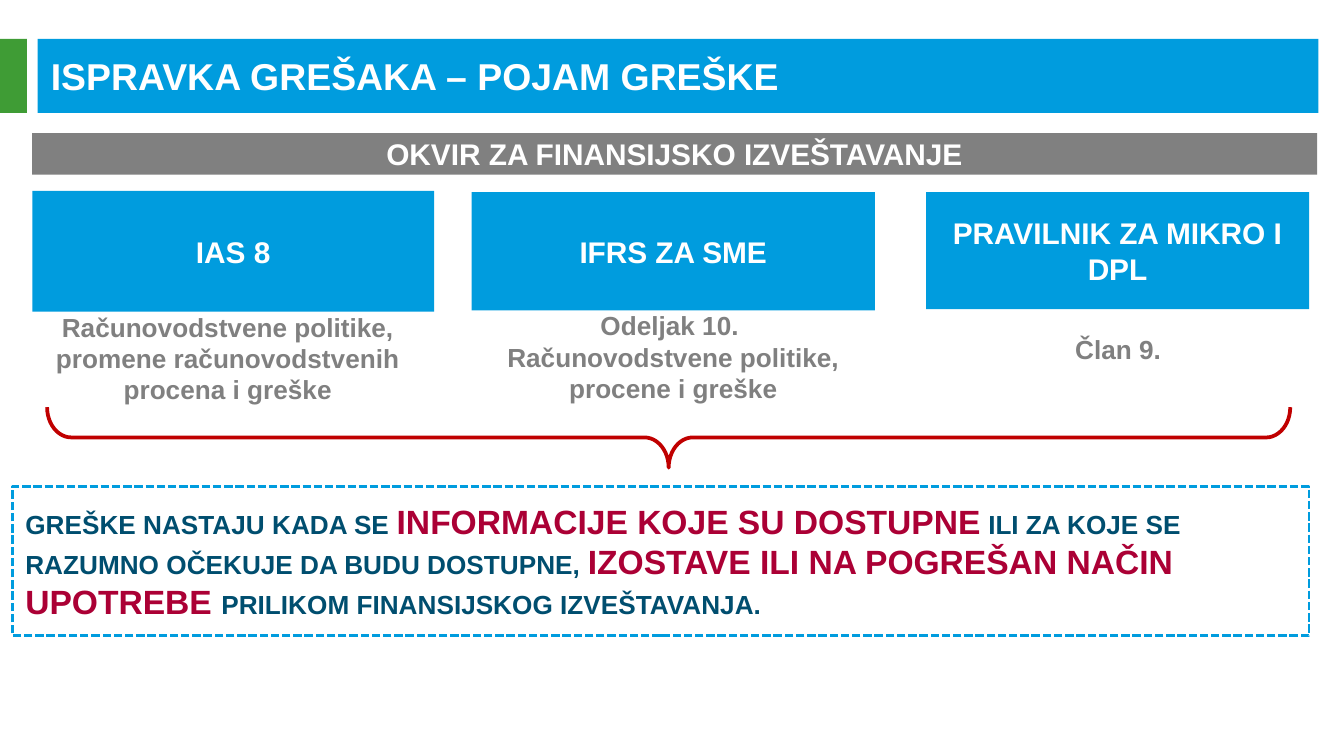
from dataclasses import dataclass
from typing import Optional

from pptx import Presentation
from pptx.dml.color import RGBColor
from pptx.enum.dml import MSO_LINE_DASH_STYLE as Dash
from pptx.enum.shapes import MSO_SHAPE as Preset
from pptx.enum.text import MSO_ANCHOR as Anchor, PP_ALIGN as Align
from pptx.util import Inches, Pt

SLIDE_WIDTH = Inches(10)
SLIDE_HEIGHT = SLIDE_WIDTH * 9 // 16
CELL = SLIDE_WIDTH // 100
BLUE, GREEN, GREY, WHITE = "009CDE", "3F9C35", "808080", "FFFFFF"
NAVY, CRIMSON, RED = "004E6F", "AB0035", "C00000"


@dataclass(frozen=True)
class Area:
    """A place in columns and rows of the slide grid."""
    column: float
    row: float
    width: float
    height: float

    def lengths(self) -> list:
        return [round(cells * CELL) for cells in (self.column, self.row, self.width, self.height)]


@dataclass(frozen=True)
class Words:
    """A run of bold text."""
    text: str
    size: int
    color: str


@dataclass(frozen=True)
class Framework:
    """A reporting framework with its header and the reference below."""
    name: str
    header: Area
    reference: list
    reference_area: Area


def rgb(value: str) -> RGBColor:
    """Turn a hex string into a colour."""
    return RGBColor.from_string(value)


def write(shape, paragraphs: list, align: Align = Align.CENTER) -> None:
    """Fill a shape with paragraphs, each a list of runs."""
    frame = shape.text_frame
    frame.word_wrap = True
    frame.vertical_anchor = Anchor.MIDDLE
    for index, runs in enumerate(paragraphs):
        paragraph = frame.add_paragraph() if index else frame.paragraphs[0]
        paragraph.alignment = align
        for words in runs:
            run = paragraph.add_run()
            run.text = words.text
            run.font.name = "Arial"
            run.font.size = Pt(words.size)
            run.font.bold = True
            run.font.color.rgb = rgb(words.color)


def add_preset(slide, area: Area, fill: Optional[str] = None, line: Optional[str] = None,
               weight: float = 1, preset: Preset = Preset.RECTANGLE):
    """Add a flat preset shape."""
    shape = slide.shapes.add_shape(preset, *area.lengths())
    shape.shadow.inherit = False
    if fill:
        shape.fill.solid()
        shape.fill.fore_color.rgb = rgb(fill)
    else:
        shape.fill.background()
    if line:
        shape.line.color.rgb = rgb(line)
        shape.line.width = Pt(weight)
    else:
        shape.line.fill.background()
    return shape


def add_text(slide, area: Area, paragraphs: list, align: Align = Align.CENTER) -> None:
    """Add a text box."""
    write(slide.shapes.add_textbox(*area.lengths()), paragraphs, align)


def add_title(slide, title: str) -> None:
    """Add the title bar with its green tab."""
    add_preset(slide, Area(2.8, 2.9, 95.3, 5.5), BLUE)
    add_preset(slide, Area(0, 2.9, 2, 5.5), GREEN)
    add_text(slide, Area(2.8, 2.1, 96.5, 7), [[Words(title, 20, WHITE)]], Align.LEFT)


def add_framework(slide, framework: Framework) -> None:
    """Add a framework header and its reference."""
    header = add_preset(slide, framework.header, BLUE)
    write(header, [[Words(framework.name, 16, WHITE)]])
    add_text(slide, framework.reference_area,
             [[Words(text, 14, GREY)] for text in framework.reference])


def add_brace(slide, area: Area) -> None:
    """Add a brace that spans the area and points down."""
    upright = Area(area.column + (area.width - area.height) / 2,
                   area.row + (area.height - area.width) / 2, area.height, area.width)
    brace = add_preset(slide, upright, line=RED, weight=2, preset=Preset.RIGHT_BRACE)
    brace.adjustments[0] = 0.4
    brace.adjustments[1] = 0.5
    brace.rotation = 90


FRAMEWORKS = [
    Framework("IAS 8", Area(2.4, 14.2, 29.9, 9),
              ["Računovodstvene politike, promene računovodstvenih procena i greške"],
              Area(2.4, 24.3, 29.1, 4.7)),
    Framework("IFRS ZA SME", Area(35.1, 14.3, 30, 8.8),
              ["Odeljak 10. ", "Računovodstvene politike, procene i greške"],
              Area(35.1, 24.3, 30, 4.5)),
    Framework("PRAVILNIK ZA MIKRO I DPL", Area(68.9, 14.3, 28.5, 8.7),
              ["Član 9."], Area(76.2, 23.7, 14, 4.5)),
]

DEFINITION = [
    Words("GREŠKE NASTAJU KADA SE ", 14, NAVY),
    Words("INFORMACIJE KOJE SU DOSTUPNE", 18, CRIMSON),
    Words(" ILI ZA KOJE SE RAZUMNO OČEKUJE DA BUDU DOSTUPNE, ", 14, NAVY),
    Words("IZOSTAVE ILI NA POGREŠAN NAČIN UPOTREBE ", 18, CRIMSON),
    Words("PRILIKOM FINANSIJSKOG IZVEŠTAVANJA.", 14, NAVY),
]


def main() -> None:
    """Build and save the slide."""
    presentation = Presentation()
    presentation.slide_width = SLIDE_WIDTH
    presentation.slide_height = SLIDE_HEIGHT
    slide = presentation.slides.add_slide(presentation.slide_layouts[6])
    add_title(slide, "ISPRAVKA GREŠAKA – POJAM GREŠKE")
    definition = add_preset(slide, Area(0.9, 36.2, 96.5, 11.1), line=BLUE, weight=1.5)
    definition.line.dash_style = Dash.SQUARE_DOT
    write(definition, [DEFINITION], Align.LEFT)
    banner = add_preset(slide, Area(2.4, 9.9, 95.6, 3.1), GREY)
    write(banner, [[Words("OKVIR ZA FINANSIJSKO IZVEŠTAVANJE", 16, WHITE)]])
    for framework in FRAMEWORKS:
        add_framework(slide, framework)
    add_brace(slide, Area(3.5, 30.3, 92.5, 4.5))
    presentation.save("out.pptx")


if __name__ == "__main__":
    main()
